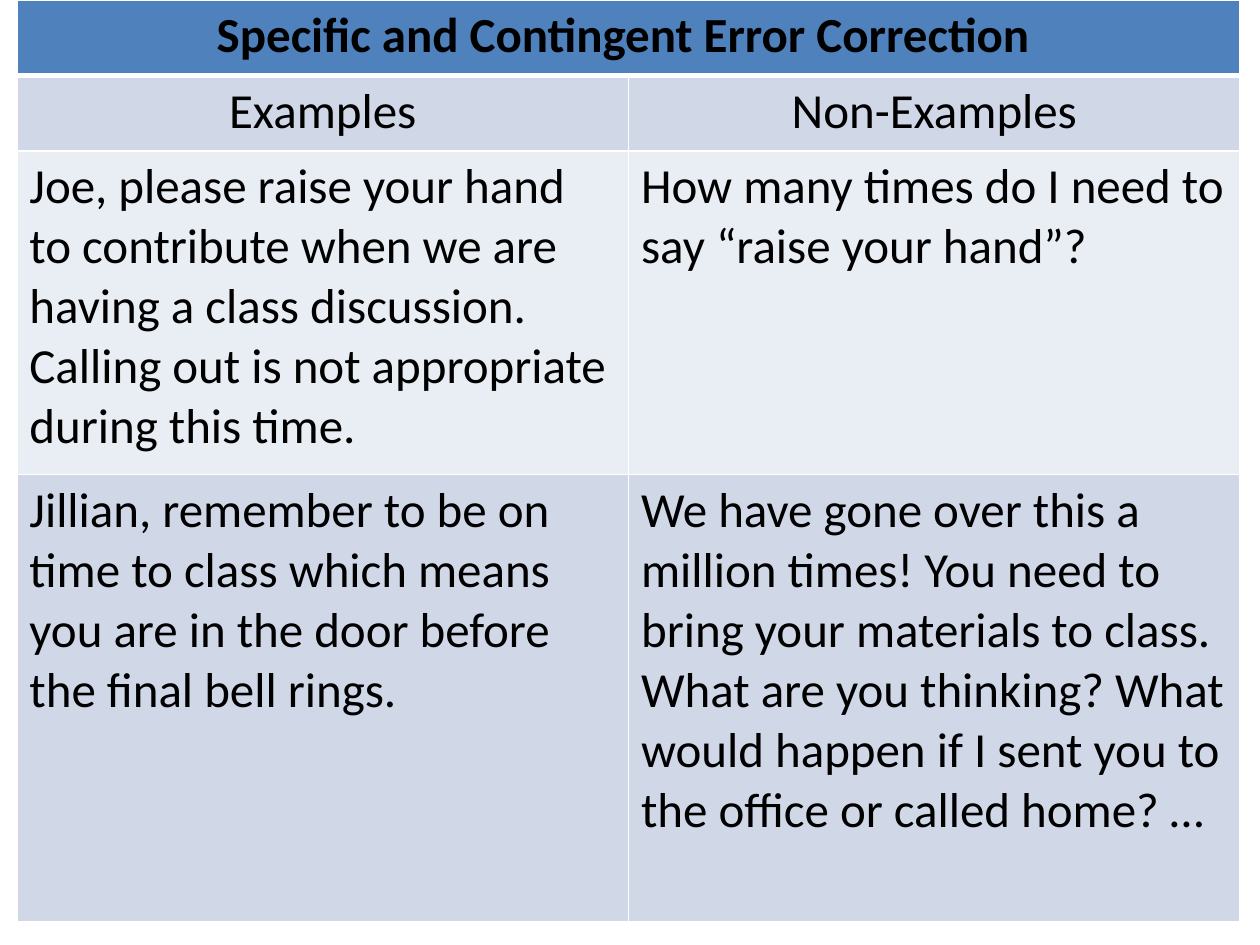
"""Build a slide with a table of error correction examples and non-examples."""
import pptx
import pptx.dml.color
import pptx.enum.text
import pptx.oxml
import pptx.oxml.ns
import pptx.util

Cm = pptx.util.Cm
ALIGN = pptx.enum.text.PP_ALIGN
FONT = {"name": "Calibri", "size": pptx.util.Pt(28)}
WIDTH = 12.33
ROWS = [
    (1.52, "4F81BD", ALIGN.CENTER, ["Specific and Contingent Error Correction "]),
    (1.52, "D0D8E8", ALIGN.CENTER, ["Examples", "Non-Examples"]),
    (6.53, "E9EDF4", ALIGN.LEFT, [
        "Joe, please raise your hand to contribute when we are having a class "
        "discussion. Calling out is not appropriate during this time.",
        "How many times do I need to say “raise your hand”?",
    ]),
    (9.02, "D0D8E8", ALIGN.LEFT, [
        "Jillian, remember to be on time to class which means you are in the "
        "door before the final bell rings.",
        "We have gone over this a million times! You need to bring your "
        "materials to class. What are you thinking? What would happen if I "
        "sent you to the office or called home? …",
    ]),
]


def paint(hue):
    return pptx.dml.color.RGBColor.from_string(hue)


def edge(cell, sides, hue="FFFFFF"):
    props = cell._tc.get_or_add_tcPr()
    for side, size in sides.items():
        props.append(pptx.oxml.parse_xml(
            f'<a:ln{side} {pptx.oxml.ns.nsdecls("a")} w="{pptx.util.Pt(size)}">'
            f'<a:solidFill><a:srgbClr val="{hue}"/></a:solidFill></a:ln{side}>'))


def fill(cell, hue):
    cell.fill.solid()
    cell.fill.fore_color.rgb = paint(hue)


def write(cell, text, align, bold):
    para = cell.text_frame.paragraphs[0]
    para.alignment = align
    run = para.add_run()
    run.text = text
    for key, value in {**FONT, "bold": bold}.items():
        setattr(run.font, key, value)
    run.font.color.rgb = paint("000000")


def grid(slide):
    high = sum(row[0] for row in ROWS)
    table = slide.shapes.add_table(
        len(ROWS), 2, Cm(0.34), Cm(0), Cm(2 * WIDTH), Cm(high)).table
    for col in table.columns:
        col.width = Cm(WIDTH)
    table.cell(0, 0).merge(table.cell(0, 1))
    for i, (tall, hue, align, texts) in enumerate(ROWS):
        table.rows[i].height = Cm(tall)
        sides = {"L": 1, "R": 1, "T": 3 if i == 1 else 1, "B": 3 if i == 0 else 1}
        for cell in table.rows[i].cells:
            edge(cell, sides)
            fill(cell, hue)
        for j, text in enumerate(texts):
            write(table.cell(i, j), text, align, i == 0)


def main():
    deck = pptx.Presentation()
    deck.slide_width, deck.slide_height = Cm(25.4), Cm(19.05)
    grid(deck.slides.add_slide(deck.slide_layouts[6]))
    deck.save("out.pptx")


if __name__ == "__main__":
    main()
